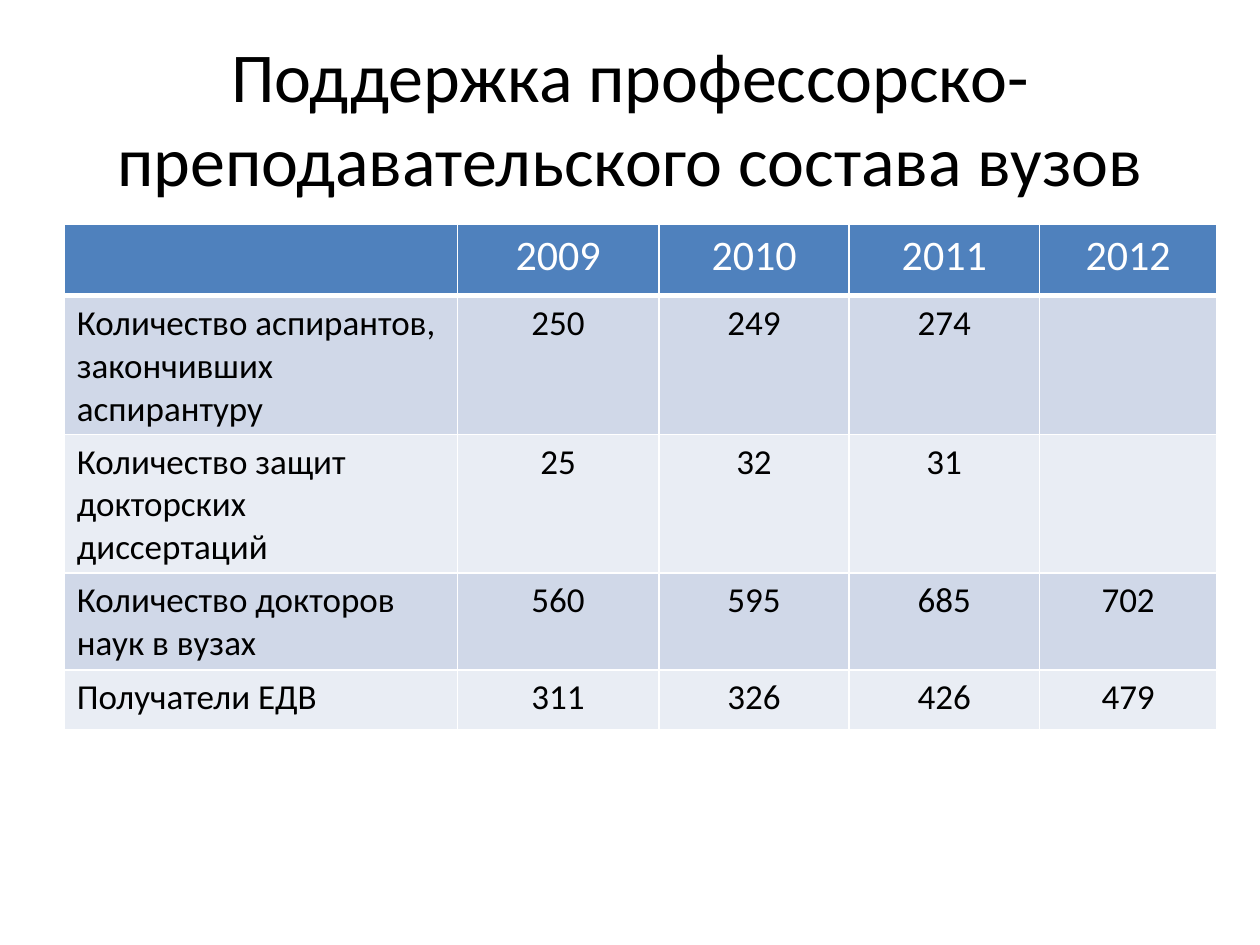
from lxml import etree
from pptx import Presentation
from pptx.dml.color import RGBColor
from pptx.enum.text import MSO_ANCHOR, PP_ALIGN
from pptx.oxml.ns import qn
from pptx.util import Inches, Pt

CENTER, LEFT = PP_ALIGN.CENTER, PP_ALIGN.LEFT
MIDDLE = MSO_ANCHOR.MIDDLE

BLACK = RGBColor(0x00, 0x00, 0x00)
WHITE = RGBColor(0xFF, 0xFF, 0xFF)
HEADER_BLUE = RGBColor(0x4F, 0x81, 0xBD)
BAND_COLORS = (RGBColor(0xE9, 0xED, 0xF4), RGBColor(0xD0, 0xD8, 0xE8))

FONT = "Calibri"
SLIDE_WIDTH, SLIDE_HEIGHT = Inches(10), Inches(7.5)
COLUMN_WIDTHS = (3.12, 1.6, 1.51, 1.51, 1.41)
ROW_HEIGHTS = (0.57, 1.1, 0.83, 0.77, 0.47)

TITLE = "Поддержка профессорско-преподавательского состава вузов"
STAFF_ROWS = (
    ("", "2009", "2010", "2011", "2012"),
    ("Количество аспирантов, закончивших аспирантуру", "250", "249", "274", ""),
    ("Количество защит докторских диссертаций", "25", "32", "31", ""),
    ("Количество докторов наук в вузах", "560", "595", "685", "702"),
    ("Получатели ЕДВ", "311", "326", "426", "479"),
)


def place(left, top, width, height):
    return (int(SLIDE_WIDTH * left), int(SLIDE_HEIGHT * top),
            int(SLIDE_WIDTH * width), int(SLIDE_HEIGHT * height))


def write_text(frame, text, *, size, color=BLACK, align=CENTER):
    para = frame.paragraphs[0]
    para.alignment = align
    span = para.add_run()
    span.text = text
    span.font.name = FONT
    span.font.size = Pt(size)
    span.font.color.rgb = color


def add_title(page, text):
    box = page.shapes.add_textbox(*place(0.05, 0.04, 0.9, 0.167))
    box.text_frame.word_wrap = True
    box.text_frame.vertical_anchor = MIDDLE
    write_text(box.text_frame, text, size=40)


def set_borders(cell, color, **widths):
    properties = cell._tc.get_or_add_tcPr()
    for side, width in widths.items():
        line = etree.SubElement(properties, qn(f"a:ln{side}"), w=str(Pt(width)))
        fill = etree.SubElement(line, qn("a:solidFill"))
        etree.SubElement(fill, qn("a:srgbClr"), val=str(color))


def fill_cell(cell, text, row, column):
    header = row == 0
    set_borders(cell, WHITE, L=1, R=1, T=3 if row == 1 else 1, B=3 if header else 1)
    cell.fill.solid()
    cell.fill.fore_color.rgb = HEADER_BLUE if header else BAND_COLORS[row % 2]
    if text:
        write_text(cell.text_frame, text, size=24 if header else 20,
                   color=WHITE if header else BLACK,
                   align=CENTER if column else LEFT)


def add_staff_table(page, rows):
    area = place(0.051, 0.237, 0.913, 0.497)
    table = page.shapes.add_table(len(rows), len(COLUMN_WIDTHS), *area).table
    for column, width in zip(table.columns, COLUMN_WIDTHS):
        column.width = Inches(width)
    for row, height in zip(table.rows, ROW_HEIGHTS):
        row.height = Inches(height)
    for row, texts in enumerate(rows):
        for column, text in enumerate(texts):
            fill_cell(table.cell(row, column), text, row, column)


def main():
    deck = Presentation()
    deck.slide_width, deck.slide_height = SLIDE_WIDTH, SLIDE_HEIGHT
    page = deck.slides.add_slide(deck.slide_layouts[6])
    add_title(page, TITLE)
    add_staff_table(page, STAFF_ROWS)
    deck.save("out.pptx")


if __name__ == "__main__":
    main()
